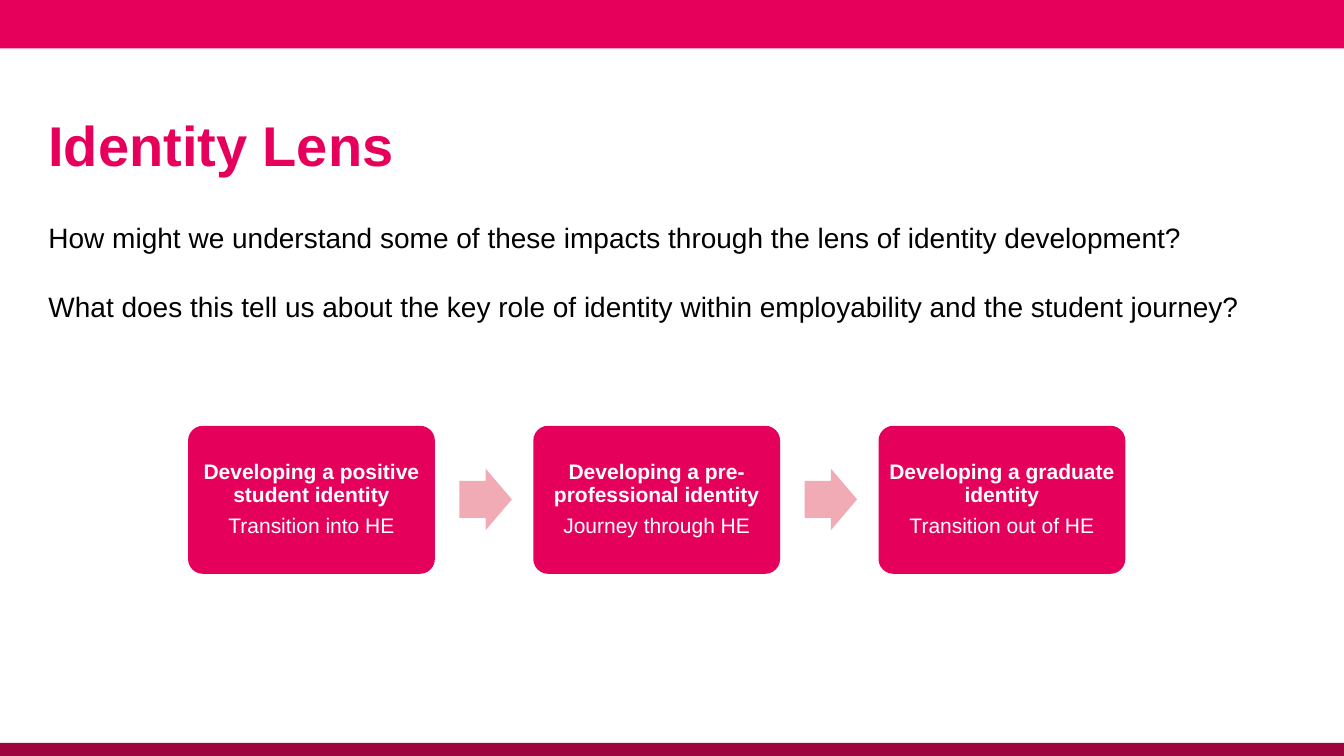
from dataclasses import dataclass

from lxml.etree import SubElement
from pptx import Presentation
from pptx.dml.color import RGBColor
from pptx.enum.shapes import MSO_SHAPE as Preset
from pptx.enum.text import MSO_ANCHOR as Anchor, MSO_AUTO_SIZE as AutoSize, PP_ALIGN as Align
from pptx.oxml.ns import qn
from pptx.shapes.autoshape import Shape
from pptx.slide import Slide
from pptx.util import Cm, Pt

PINK = RGBColor(0xE6, 0x00, 0x5B)
CARD_PINK = RGBColor(0xE5, 0x00, 0x5B)
PALE_PINK = RGBColor(0xF0, 0xAB, 0xB5)
CRIMSON = RGBColor(0x9E, 0x04, 0x3D)
WHITE = RGBColor(0xFF, 0xFF, 0xFF)
BLACK = RGBColor(0x00, 0x00, 0x00)

PAGE_WIDTH, PAGE_HEIGHT = 33.87, 19.05
STAGE_LEFT, STAGE_PITCH = 4.74, 8.7
ARROW_OFFSET = 6.84


@dataclass(frozen=True)
class Area:
    left: float
    top: float
    width: float
    height: float


@dataclass(frozen=True)
class Stage:
    heading: str
    phase: str


@dataclass(frozen=True)
class TextStyle:
    size: float
    color: RGBColor
    bold: bool = False
    align: Align = Align.LEFT
    line_spacing: float = 1.0
    space_after: float = 0


STAGES = [
    Stage("Developing a positive student identity", "Transition into HE"),
    Stage("Developing a pre-professional identity", "Journey through HE"),
    Stage("Developing a graduate identity", "Transition out of HE"),
]
QUESTIONS = [
    "How might we understand some of these impacts through the lens of identity development?",
    "What does this tell us about the key role of identity within employability and the student journey?",
]
TITLE = TextStyle(40, PINK, bold=True)
QUESTION = TextStyle(20, BLACK, space_after=25)
LAST_QUESTION = TextStyle(20, BLACK)
HEADING = TextStyle(15, WHITE, True, Align.CENTER, 0.9, 6)
PHASE = TextStyle(15, WHITE, False, Align.CENTER, 0.9)


def set_all(target: object, values: dict) -> None:
    for name, value in values.items():
        setattr(target, name, value)


def place(box: Shape, area: Area) -> None:
    set_all(box, {
        "left": Cm(area.left), "top": Cm(area.top),
        "width": Cm(area.width), "height": Cm(area.height),
    })


def write(box: Shape, lines: list[tuple[str, TextStyle]], anchor: Anchor,
          insets: tuple[float, float, float, float]) -> None:
    frame = box.text_frame
    left, top, right, bottom = map(Cm, insets)
    set_all(frame, {
        "word_wrap": True, "auto_size": AutoSize.NONE, "vertical_anchor": anchor,
        "margin_left": left, "margin_top": top,
        "margin_right": right, "margin_bottom": bottom,
    })
    for index, (words, style) in enumerate(lines):
        para = frame.paragraphs[0] if index == 0 else frame.add_paragraph()
        set_all(para, {
            "alignment": style.align, "line_spacing": style.line_spacing,
            "space_before": Pt(0), "space_after": Pt(style.space_after),
        })
        properties = para._p.get_or_add_pPr()
        properties.set("marL", "0")
        properties.set("indent", "0")
        SubElement(properties, qn("a:buNone"))
        span = para.add_run()
        span.text = words
        set_all(span.font, {"name": "Arial", "size": Pt(style.size), "bold": style.bold})
        span.font.color.rgb = style.color


def add_block(page: Slide, preset: Preset, area: Area, fill: RGBColor,
              adjustments: tuple[float, ...] = ()) -> Shape:
    block = page.shapes.add_shape(
        preset, Cm(area.left), Cm(area.top), Cm(area.width), Cm(area.height))
    block.shadow.inherit = False
    block.fill.solid()
    block.fill.fore_color.rgb = fill
    block.line.fill.background()
    for index, value in enumerate(adjustments):
        block.adjustments[index] = value
    return block


def add_stage(page: Slide, stage: Stage, left: float) -> None:
    card = add_block(page, Preset.ROUNDED_RECTANGLE,
                     Area(left, 10.73, 6.22, 3.73), CARD_PINK, (0.1,))
    write(card, [(stage.heading, HEADING), (stage.phase, PHASE)],
          Anchor.MIDDLE, (0.15, 0.15, 0.15, 0.15))


def main() -> None:
    deck = Presentation()
    set_all(deck, {"slide_width": Cm(PAGE_WIDTH), "slide_height": Cm(PAGE_HEIGHT)})
    page = deck.slides.add_slide(deck.slide_layouts[1])

    add_block(page, Preset.RECTANGLE, Area(0, 0, PAGE_WIDTH, 1.22), PINK)
    add_block(page, Preset.RECTANGLE, Area(0, 18.72, PAGE_WIDTH, 0.33), CRIMSON)

    title, body = page.placeholders
    place(title, Area(1.22, 2.24, 31.4, 2.8))
    write(title, [("Identity Lens", TITLE)], Anchor.MIDDLE, (0, 0.13, 0.25, 0.13))
    place(body, Area(1.22, 5.56, 30.66, 2.57))
    write(body, list(zip(QUESTIONS, (QUESTION, LAST_QUESTION))), Anchor.BOTTOM, (0, 0, 0, 0))

    for index, stage in enumerate(STAGES):
        left = STAGE_LEFT + index * STAGE_PITCH
        add_stage(page, stage, left)
        if index < len(STAGES) - 1:
            add_block(page, Preset.RIGHT_ARROW,
                      Area(left + ARROW_OFFSET, 11.81, 1.32, 1.55), PALE_PINK, (0.6, 0.5))

    deck.save("out.pptx")


if __name__ == "__main__":
    main()
